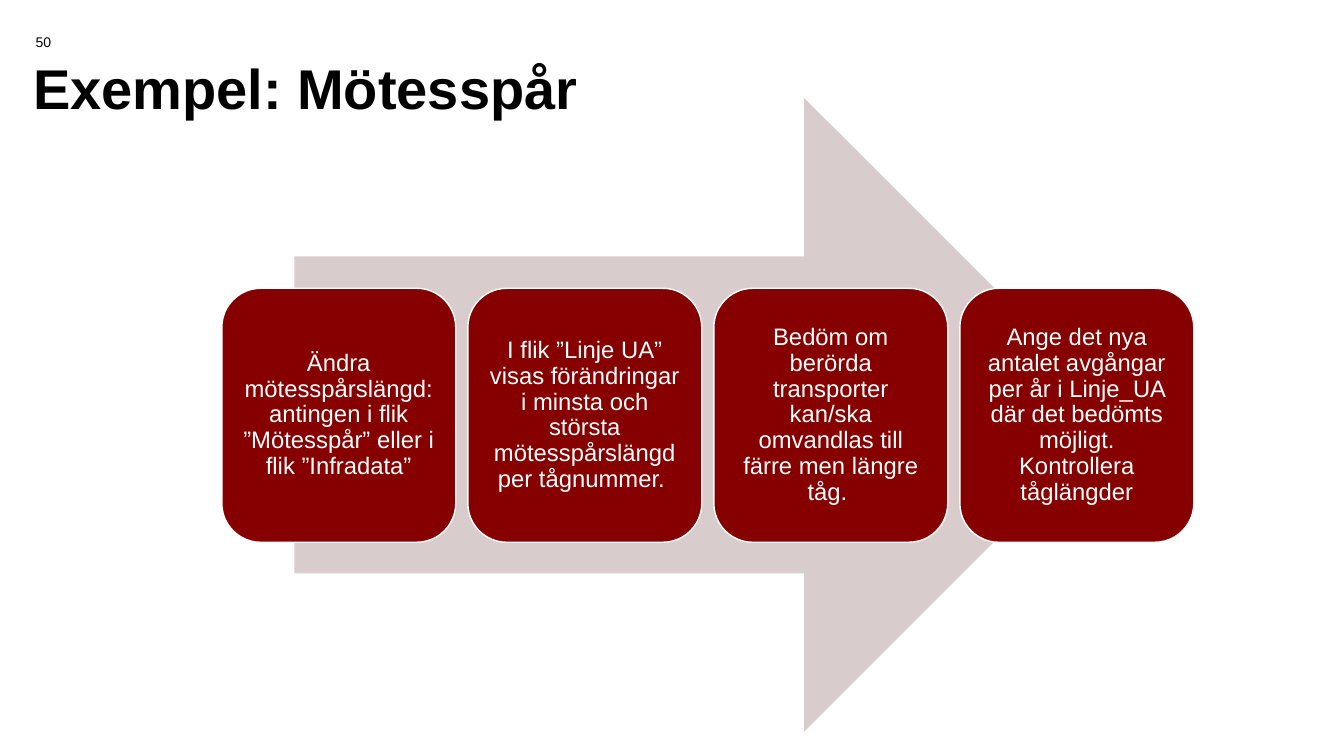
from pptx import Presentation
from pptx.dml.color import RGBColor
from pptx.enum import shapes, text
from pptx.util import Inches, Pt

BLACK = RGBColor(0x00, 0x00, 0x00)
WHITE = RGBColor(0xFF, 0xFF, 0xFF)
DARK_RED = RGBColor(0x87, 0x00, 0x00)
PALE_RED = RGBColor(0xD9, 0xCC, 0xCC)

STEPS = [
    "Ändra mötesspårslängd: antingen i flik ”Mötesspår” eller i flik ”Infradata”",
    "I flik ”Linje UA” visas förändringar i minsta och största "
    "mötesspårslängd per tågnummer. ",
    "Bedöm om berörda transporter kan/ska omvandlas till färre men längre tåg. ",
    "Ange det nya antalet avgångar per år i Linje_UA där det bedömts möjligt. "
    "Kontrollera tåglängder",
]
STEP_LEFT, STEP_PITCH = 2.2, 2.44


def write(shape, wording, alignment, line_spacing, **font_format):
    frame = shape.text_frame
    frame.word_wrap = True
    frame.vertical_anchor = text.MSO_ANCHOR.MIDDLE
    paragraph = frame.paragraphs[0]
    paragraph.text = wording
    paragraph.alignment = alignment
    paragraph.line_spacing = line_spacing
    font = paragraph.runs[0].font
    color = font_format.pop("color")
    for name, value in {"name": "Arial", **font_format}.items():
        setattr(font, name, value)
    font.color.rgb = color


def add_label(slide, box, wording, alignment, line_spacing, **font_format):
    label = slide.shapes.add_textbox(*map(Inches, box))
    write(label, wording, alignment, line_spacing, color=BLACK, **font_format)


def add_filled(slide, preset, box, fill):
    shape = slide.shapes.add_shape(preset, *map(Inches, box))
    shape.shadow.inherit = False
    shape.fill.solid()
    shape.fill.fore_color.rgb = fill
    shape.line.fill.background()
    return shape


def add_step(slide, left, wording):
    step = add_filled(slide, shapes.MSO_SHAPE.ROUNDED_RECTANGLE,
                      (left, 2.86, 2.32, 2.52), DARK_RED)
    step.line.color.rgb = WHITE
    step.line.width = Pt(1)
    for side in ("left", "right", "top", "bottom"):
        setattr(step.text_frame, f"margin_{side}", Inches(0.07))
    write(step, wording, text.PP_ALIGN.CENTER, 0.9, size=Pt(17), color=WHITE)


def main():
    deck = Presentation()
    deck.slide_width, deck.slide_height = Inches(13.33), Inches(7.5)
    slide = deck.slides.add_slide(deck.slide_layouts[6])

    add_label(slide, (0.23, 0.42, 11.81, 0.98), "Exempel: Mötesspår",
              text.PP_ALIGN.LEFT, 0.9, size=Pt(40), bold=True)
    add_label(slide, (0, 0.22, 0.86, 0.4), "50",
              text.PP_ALIGN.CENTER, 1.0, size=Pt(10))
    add_filled(slide, shapes.MSO_SHAPE.RIGHT_ARROW, (2.92, 0.97, 8.2, 6.29), PALE_RED)
    for index, wording in enumerate(STEPS):
        add_step(slide, STEP_LEFT + index * STEP_PITCH, wording)

    deck.save("out.pptx")


if __name__ == "__main__":
    main()
